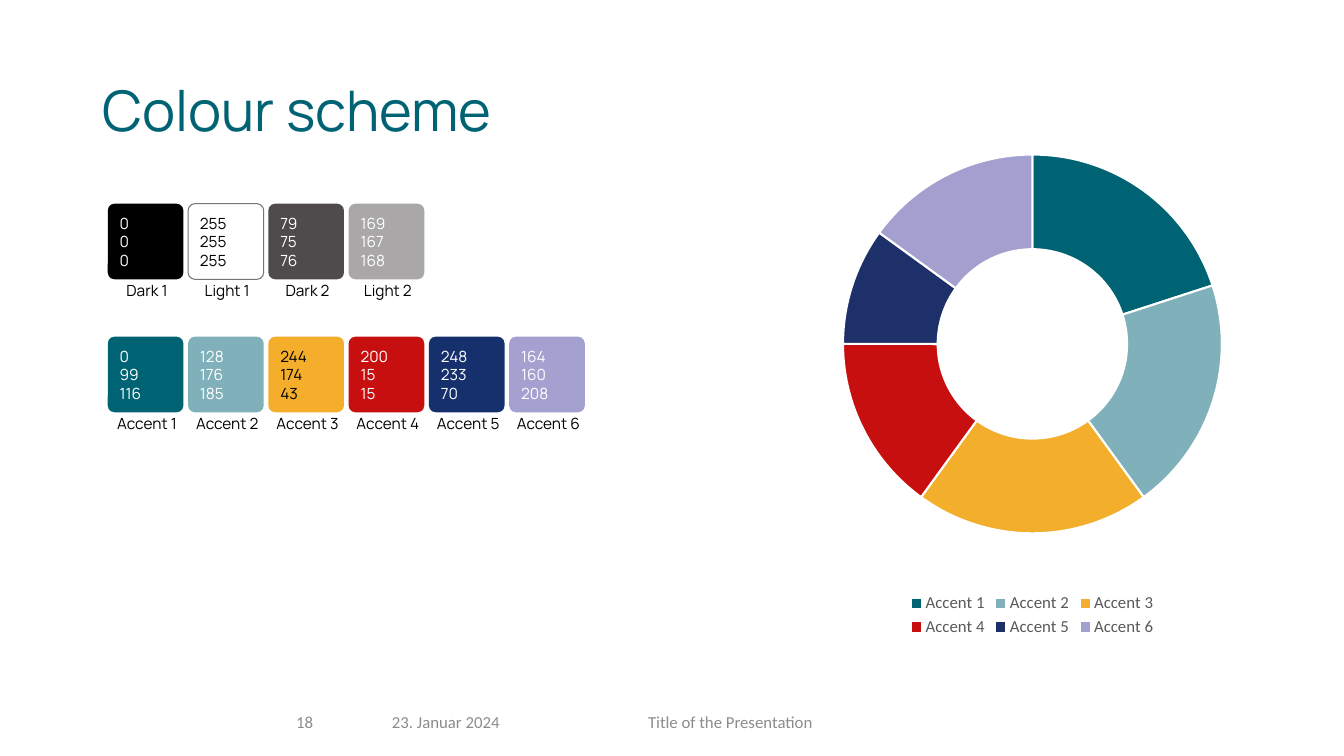
from dataclasses import dataclass

from lxml.etree import SubElement
from pptx import Presentation
from pptx.chart.data import CategoryChartData
from pptx.dml.color import RGBColor
from pptx.enum.chart import XL_CHART_TYPE, XL_LEGEND_POSITION
from pptx.enum.shapes import MSO_SHAPE
from pptx.enum.text import MSO_ANCHOR, PP_ALIGN
from pptx.oxml.ns import qn
from pptx.util import Pt


@dataclass(frozen=True)
class Theme:
    heading: str = "Manrope"
    body: str = "Calibri"
    title_size: int = 40
    swatch_size: int = 11
    small_size: int = 12
    primary: str = "006374"
    black: str = "000000"
    white: str = "FFFFFF"
    outline: str = "767474"
    footer: str = "8C8C8C"
    legend: str = "595959"


THEME = Theme()

BASE_SWATCHES = [
    ("Dark 1", "000000", (0, 0, 0), THEME.white),
    ("Light 1", "FFFFFF", (255, 255, 255), THEME.black),
    ("Dark 2", "4F4B4C", (79, 75, 76), THEME.white),
    ("Light 2", "A9A7A8", (169, 167, 168), THEME.white),
]
ACCENT_SWATCHES = [
    ("Accent 1", "006374", (0, 99, 116), THEME.white),
    ("Accent 2", "80B0B9", (128, 176, 185), THEME.white),
    ("Accent 3", "F4AE2B", (244, 174, 43), THEME.black),
    ("Accent 4", "C80F0F", (200, 15, 15), THEME.white),
    ("Accent 5", "16306D", (248, 233, 70), THEME.white),
    ("Accent 6", "A4A0D0", (164, 160, 208), THEME.white),
]
CHART_POINTS = [
    ("Accent 1", 20, "006374"),
    ("Accent 2", 20, "80B0B9"),
    ("Accent 3", 20, "F3AE2B"),
    ("Accent 4", 15, "C80F0F"),
    ("Accent 5", 10, "1D3069"),
    ("Accent 6", 15, "A3A0D0"),
]


def set_font(font, name, size, color):
    font.name = name
    font.size = Pt(size)
    font.color.rgb = RGBColor.from_string(color)


def write(sp, lines, name, size, color, align=PP_ALIGN.LEFT, anchor=MSO_ANCHOR.MIDDLE):
    tf = sp.text_frame
    tf.word_wrap = True
    tf.vertical_anchor = anchor
    tf.text = "\n".join(lines)
    for p in tf.paragraphs:
        p.alignment = align
        set_font(p.font, name, size, color)


def add_title(s, x, y, w, h):
    sp = s.shapes.title
    sp.left, sp.top, sp.width, sp.height = Pt(x), Pt(y), Pt(w), Pt(h)
    write(sp, ["Colour scheme"], THEME.heading, THEME.title_size, THEME.primary)
    sp.text_frame.paragraphs[0].line_spacing = 0.9


def add_swatch_row(s, x, y, swatches, side=54, pitch=57.35):
    label_w = 74
    for i, (label, fill, rgb, ink) in enumerate(swatches):
        left = x + i * pitch
        sp = s.shapes.add_shape(
            MSO_SHAPE.ROUNDED_RECTANGLE, Pt(left), Pt(y), Pt(side), Pt(side))
        sp.adjustments[0] = 0.089
        sp.shadow.inherit = False
        sp.fill.solid()
        sp.fill.fore_color.rgb = RGBColor.from_string(fill)
        if fill == THEME.white:
            sp.line.color.rgb = RGBColor.from_string(THEME.outline)
            sp.line.width = Pt(0.75)
        else:
            sp.line.fill.background()
        write(sp, [str(v) for v in rgb], THEME.heading, THEME.swatch_size, ink)

        box = s.shapes.add_textbox(
            Pt(left + (side - label_w) / 2 + 1), Pt(y + side - 2.2), Pt(label_w), Pt(21))
        write(box, [label], THEME.heading, THEME.swatch_size, THEME.black,
              PP_ALIGN.CENTER, MSO_ANCHOR.TOP)


def add_colour_ring(s, x, y, w, h):
    data = CategoryChartData()
    data.categories = [name for name, _, _ in CHART_POINTS]
    data.add_series("Series 1", [value for _, value, _ in CHART_POINTS])
    chart = s.shapes.add_chart(
        XL_CHART_TYPE.DOUGHNUT, Pt(x), Pt(y), Pt(w), Pt(h), data).chart
    chart.has_title = False
    set_font(chart.font, THEME.body, 10, THEME.black)
    chart.has_legend = True
    chart.legend.position = XL_LEGEND_POSITION.BOTTOM
    chart.legend.include_in_layout = False
    set_font(chart.legend.font, THEME.body, THEME.small_size, THEME.legend)

    plot = chart.plots[0]
    plot.vary_by_categories = True
    plot.has_data_labels = False
    for i, (_, _, color) in enumerate(CHART_POINTS):
        fmt = plot.series[0].points[i].format
        fmt.fill.solid()
        fmt.fill.fore_color.rgb = RGBColor.from_string(color)
        fmt.line.color.rgb = RGBColor.from_string(THEME.white)
        fmt.line.width = Pt(1.5)

    root = chart.element
    root.find(".//" + qn("c:holeSize")).set("val", "50")
    area = root.find(".//" + qn("c:plotArea"))
    layout = area.find(qn("c:layout"))
    if layout is None:
        layout = SubElement(area, qn("c:layout"))
        area.insert(0, layout)
    manual = SubElement(layout, qn("c:manualLayout"))
    for tag, val in (("layoutTarget", "inner"), ("xMode", "edge"), ("yMode", "edge"),
                     ("x", "0.035"), ("y", "0.09"), ("w", "0.93"), ("h", "0.71")):
        SubElement(manual, qn("c:" + tag)).set("val", val)


def add_footer(s, x, y, h):
    for text, dx, w in (("18", 0, 62), ("23. Januar 2024", 68.4, 177),
                        ("Title of the Presentation", 251.3, 384.5)):
        box = s.shapes.add_textbox(Pt(x + dx), Pt(y), Pt(w), Pt(h))
        write(box, [text], THEME.body, THEME.small_size, THEME.footer)


def main():
    prs = Presentation()
    prs.slide_width, prs.slide_height = Pt(960), Pt(540)
    s = prs.slides.add_slide(prs.slide_layouts[5])
    add_title(s, 66, 28.75, 828, 104.4)
    add_swatch_row(s, 77, 145.5, BASE_SWATCHES)
    add_swatch_row(s, 77, 240.5, ACCENT_SWATCHES)
    add_colour_ring(s, 592, 75.6, 291, 382.3)
    add_footer(s, 204.5, 501, 28.8)
    prs.save("out.pptx")


if __name__ == "__main__":
    main()
